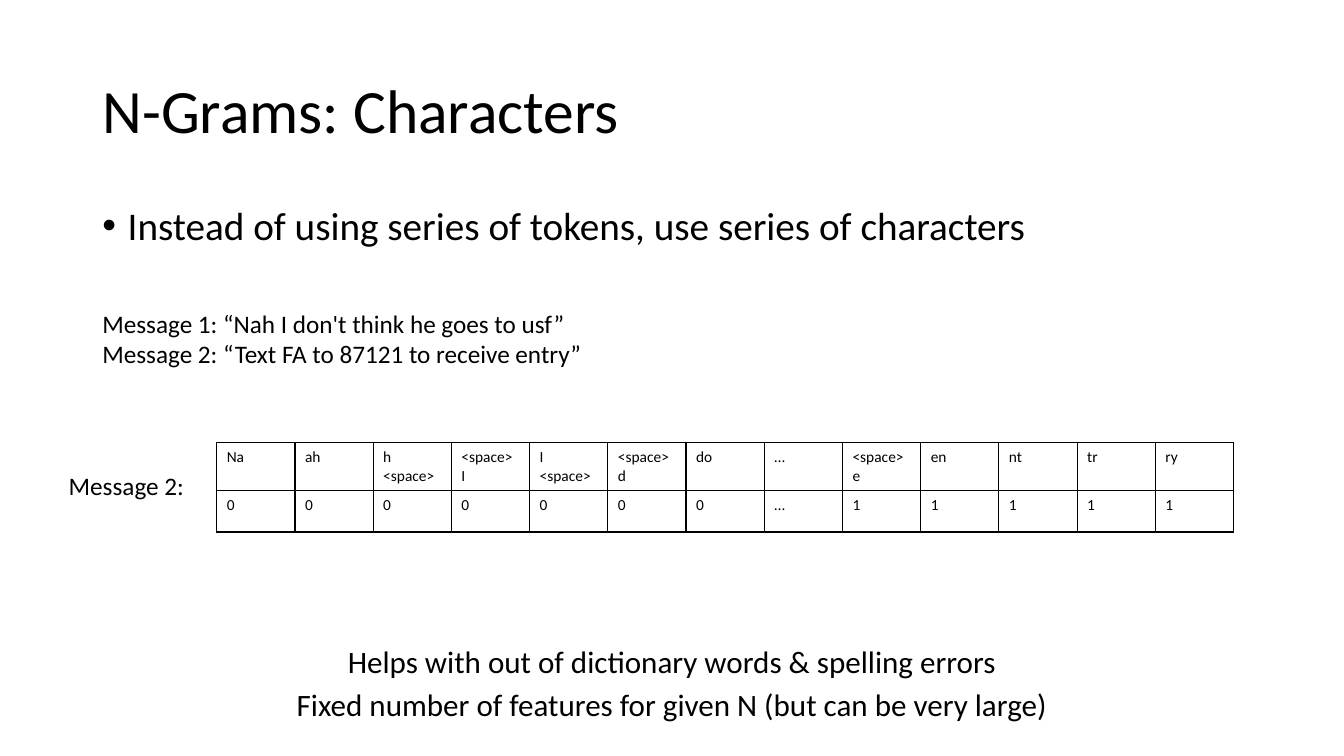
from lxml.etree import SubElement
from pptx import Presentation
from pptx.dml.color import RGBColor
from pptx.enum.text import MSO_ANCHOR as Anchor, MSO_AUTO_SIZE as AutoSize, PP_ALIGN as Align
from pptx.oxml.ns import qn
from pptx.util import Inches, Pt

COLUMNS, ROWS = 160, 90
UNIT = Inches(1) // 12
FONT = "Calibri"
INK = "000000"
MARGIN, CONTENT_WIDTH = 11, 138

MESSAGES = [
    "Message 1: “Nah I don't think he goes to usf”",
    "Message 2: “Text FA to 87121 to receive entry”",
]
BIGRAM_COUNTS = [
    ("Na", "0"), ("ah", "0"), ("h <space>", "0"), ("<space> I", "0"),
    ("I <space>", "0"), ("<space> d", "0"), ("do", "0"), ("…", "…"),
    ("<space> e", "1"), ("en", "1"), ("nt", "1"), ("tr", "1"), ("ry", "1"),
]
CONCLUSIONS = [
    "Helps with out of dictionary words & spelling errors",
    "Fixed number of features for given N (but can be very large)",
]


def grid(*lengths):
    return [round(length * UNIT) for length in lengths]


def color(hex_value):
    return RGBColor.from_string(hex_value)


def write(frame, lines, size, align=Align.LEFT, spacing=1.0, before=0,
          anchor=Anchor.TOP, wrap=True, fit=AutoSize.NONE):
    frame.word_wrap = wrap
    frame.auto_size = fit
    frame.vertical_anchor = anchor
    for index, line in enumerate(lines):
        paragraph = frame.paragraphs[0] if index == 0 else frame.add_paragraph()
        paragraph.alignment = align
        paragraph.line_spacing = spacing
        paragraph.space_before = Pt(before)
        run = paragraph.add_run()
        run.text = line
        run.font.size = Pt(size)
        run.font.name = FONT
        run.font.color.rgb = color(INK)


def move(placeholder, box):
    placeholder.left, placeholder.top, placeholder.width, placeholder.height = grid(*box)


def add_bullet(paragraph):
    properties = paragraph._p.get_or_add_pPr()
    properties.set("marL", str(Inches(0.25)))
    properties.set("indent", str(-Inches(0.25)))
    SubElement(properties, qn("a:buFont"), typeface="Arial")
    SubElement(properties, qn("a:buChar"), char="•")


def add_heading(slide, box):
    heading = slide.shapes.title
    move(heading, box)
    write(heading.text_frame, ["N-Grams: Characters"], 44, spacing=0.9, anchor=Anchor.MIDDLE)


def add_idea(slide, box):
    idea = slide.placeholders[1]
    move(idea, box)
    write(idea.text_frame, ["Instead of using series of tokens, use series of characters"],
          28, spacing=0.9, before=10)
    add_bullet(idea.text_frame.paragraphs[0])


def add_note(slide, box, lines, size, **text_format):
    note = slide.shapes.add_textbox(*grid(*box))
    write(note.text_frame, lines, size, **text_format)


def outline(cell):
    properties = cell._tc.get_or_add_tcPr()
    for side in ("lnL", "lnR", "lnT", "lnB"):
        border = SubElement(properties, qn(f"a:{side}"), w=str(Pt(1)))
        fill = SubElement(border, qn("a:solidFill"))
        SubElement(fill, qn("a:srgbClr"), val=INK)
    cell.fill.background()


def add_bigram_table(slide, box):
    bigrams = slide.shapes.add_table(2, len(BIGRAM_COUNTS), *grid(*box)).table
    bigrams.first_row = False
    bigrams.horz_banding = False
    for column, pair in enumerate(BIGRAM_COUNTS):
        for row, entry in enumerate(pair):
            cell = bigrams.cell(row, column)
            write(cell.text_frame, [entry], 11, fit=None)
            outline(cell)


def add_vector(slide, box):
    left, top, width, height = box
    add_bigram_table(slide, box)
    add_note(slide, (left - 18.8, top + 2.7, 16.3, 4.8), ["Message 2:"], 18,
             wrap=False, fit=AutoSize.SHAPE_TO_FIT_TEXT)


def build_ngram_slide(deck):
    slide = deck.slides.add_slide(deck.slide_layouts[1])
    add_heading(slide, (MARGIN, 4.8, CONTENT_WIDTH, 17.4))
    add_idea(slide, (MARGIN, 24, CONTENT_WIDTH, 57.1))
    add_note(slide, (MARGIN, 36.1, 121.1, 12.1), MESSAGES, 18)
    add_vector(slide, (25.8, 52.7, 121.1, 9.8))
    add_note(slide, (MARGIN, 76.7, CONTENT_WIDTH, 10.4), CONCLUSIONS, 22.2,
             align=Align.CENTER, spacing=0.8, before=10)


def main():
    deck = Presentation()
    deck.slide_width, deck.slide_height = grid(COLUMNS, ROWS)
    build_ngram_slide(deck)
    deck.save("out.pptx")


if __name__ == "__main__":
    main()
